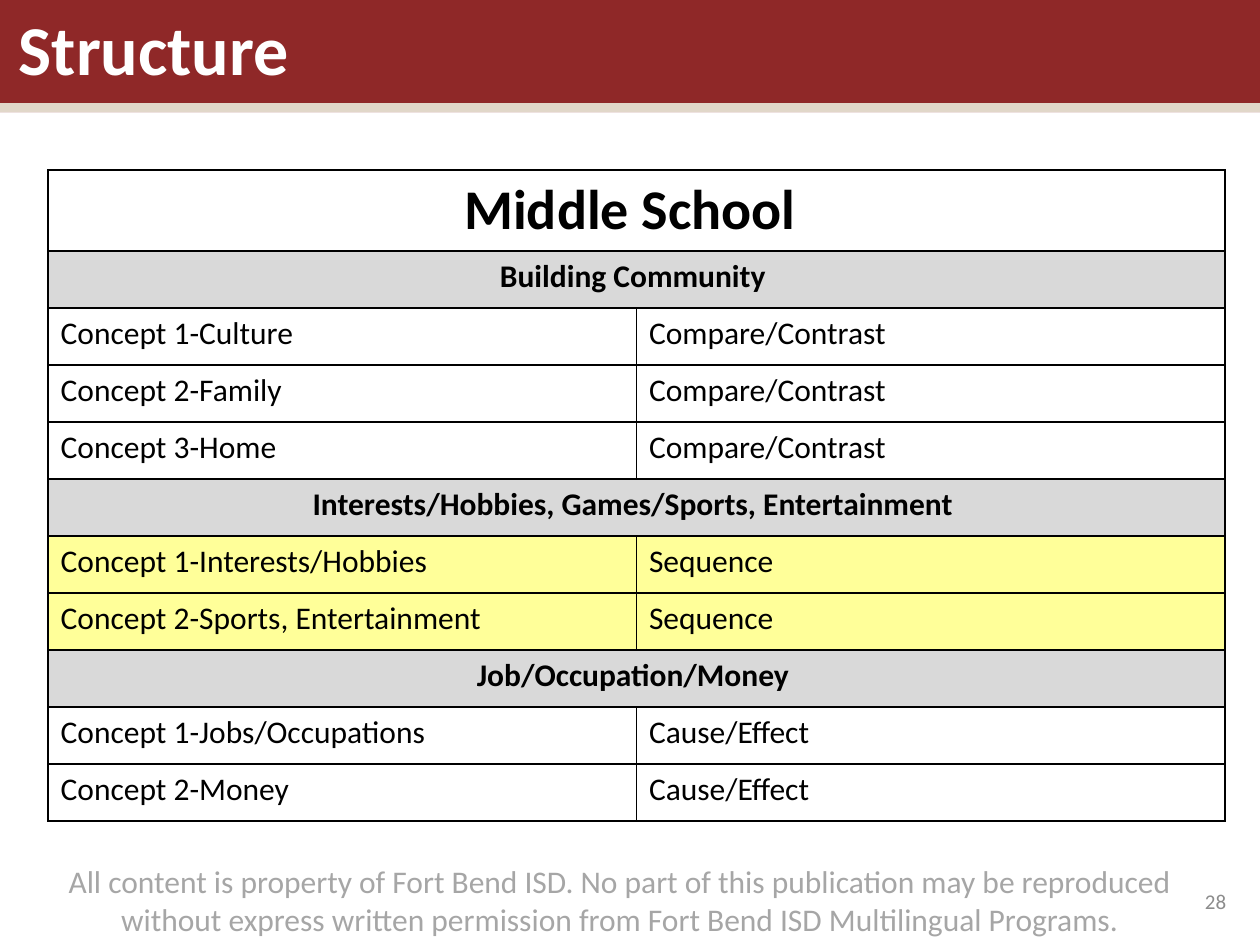
"""Build the Middle School structure slide."""
from lxml.etree import SubElement
from pptx import Presentation
from pptx.dml.color import RGBColor
from pptx.enum.shapes import MSO_SHAPE
from pptx.enum.text import MSO_ANCHOR, PP_ALIGN
from pptx.oxml.ns import qn
from pptx.util import Cm, Pt

COLORS = {
    "banner": "8F2828",
    "stripe": "E1D7C9",
    "white": "FFFFFF",
    "black": "000000",
    "section": "D9D9D9",
    "highlight": "FFFF99",
    "number": "8C8C8C",
    "notice": "A6A6A6",
}

ROWS = [
    ("Building Community ",),
    ("Concept 1-Culture", "Compare/Contrast"),
    ("Concept 2-Family", "Compare/Contrast"),
    ("Concept 3-Home", "Compare/Contrast"),
    ("Interests/Hobbies, Games/Sports, Entertainment ",),
    ("Concept 1-Interests/Hobbies", "Sequence"),
    ("Concept 2-Sports, Entertainment", "Sequence"),
    ("Job/Occupation/Money ",),
    ("Concept 1-Jobs/Occupations", "Cause/Effect"),
    ("Concept 2-Money", "Cause/Effect"),
]

NOTICE = (
    "All content is property of Fort Bend ISD. No part of this publication may be "
    "reproduced without express written permission from Fort Bend ISD Multilingual Programs."
)


def rgb(name):
    """Return the named colour."""
    return RGBColor.from_string(COLORS[name])


def write(frame, text, size=18, color="black", bold=False, align=PP_ALIGN.LEFT):
    """Put one formatted paragraph in a text frame."""
    paragraph = frame.paragraphs[0]
    paragraph.alignment = align
    run = paragraph.add_run()
    run.text = text
    run.font.name = "Calibri"
    run.font.size = Pt(size)
    run.font.bold = bold
    run.font.color.rgb = rgb(color)


def add_band(slide, top, height, color):
    """Add a plain band across the slide."""
    band = slide.shapes.add_shape(MSO_SHAPE.RECTANGLE, 0, Cm(top), Cm(25.4), Cm(height))
    band.shadow.inherit = False
    band.fill.solid()
    band.fill.fore_color.rgb = rgb(color)
    band.line.fill.background()


def add_label(slide, box, text, anchor=MSO_ANCHOR.MIDDLE, **style):
    """Add a wrapping text box."""
    frame = slide.shapes.add_textbox(*map(Cm, box)).text_frame
    frame.word_wrap = True
    frame.vertical_anchor = anchor
    write(frame, text, **style)


def outline(cell):
    """Draw a thin black border on every side of a cell."""
    properties = cell._tc.get_or_add_tcPr()
    for position, side in enumerate(("a:lnL", "a:lnR", "a:lnT", "a:lnB")):
        border = SubElement(properties, qn(side), w=str(Pt(1)))
        fill = SubElement(border, qn("a:solidFill"))
        SubElement(fill, qn("a:srgbClr"), val=COLORS["black"])
        properties.insert(position, border)


def fill_row(table, index, texts, color, **style):
    """Fill one table row, merging it when it has a single text."""
    cells = list(table.rows[index].cells)
    if len(texts) == 1:
        cells[0].merge(cells[1])
    for cell in cells:
        cell.fill.solid()
        cell.fill.fore_color.rgb = rgb(color)
        outline(cell)
    for cell, text in zip(cells, texts):
        write(cell.text_frame, text, **style)


def add_concepts(slide):
    """Add the table of concepts and their text structures."""
    frame = slide.shapes.add_table(
        len(ROWS) + 1, 2, Cm(0.97), Cm(3.43), Cm(23.72), Cm(13.13)
    )
    table = frame.table
    for row in table.rows:
        row.height = Cm(1.15)
    table.rows[0].height = Cm(1.63)
    heading = {"bold": True, "align": PP_ALIGN.CENTER}
    fill_row(table, 0, ("Middle School ",), "white", size=32, **heading)
    for index, texts in enumerate(ROWS, start=1):
        if len(texts) == 1:
            fill_row(table, index, texts, "section", **heading)
        else:
            color = "highlight" if texts[1] == "Sequence" else "white"
            fill_row(table, index, texts, color)


def main():
    """Build and save the slide."""
    deck = Presentation()
    deck.slide_width, deck.slide_height = Cm(25.4), Cm(19.05)
    slide = deck.slides.add_slide(deck.slide_layouts[6])
    add_band(slide, 0, 2.26, "banner")
    add_band(slide, 2.08, 0.18, "stripe")
    add_label(slide, (0.13, -0.64, 23.42, 3.18), "Structure",
              size=40, color="white", bold=True)
    add_label(slide, (22.76, 17.65, 2.21, 1.02), "28",
              size=12, color="number", align=PP_ALIGN.RIGHT)
    add_concepts(slide)
    add_label(slide, (0.74, 17.25, 23.52, 1.8), NOTICE, anchor=MSO_ANCHOR.TOP,
              color="notice", align=PP_ALIGN.CENTER)
    deck.save("out.pptx")


if __name__ == "__main__":
    main()
